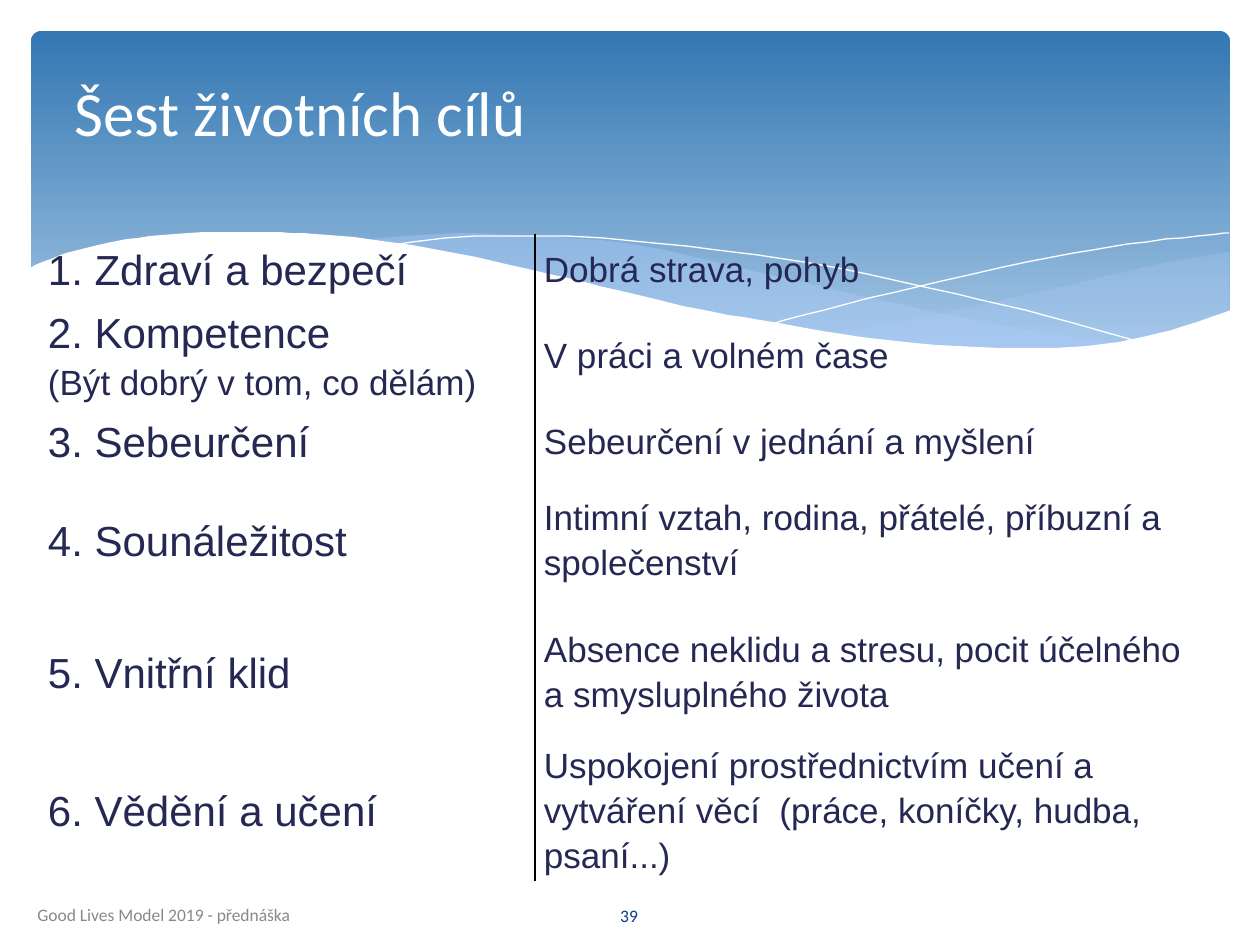
import pptx
import pptx.util
import pptx.dml.color
import pptx.enum.shapes
import pptx.enum.text
import pptx.oxml
import pptx.oxml.ns

PX = 914400 / 126
COLORS = {"banner_top": "3477B2", "banner_bottom": "9FC3E3", "wave": "ACCBF9",
          "white": "FFFFFF", "ink": "242852", "footer": "898989",
          "number": "073E87", "divider": "000000"}

# Content: text, box (left, top, width, height), size, colour, alignment
LABELS = [
    ("Good Lives Model 2019 - přednáška", (25, 890, 522, 50), 10, "footer", "LEFT"),
    ("39", (549, 891, 160, 50), 10, "number", "CENTER"),
    ("Šest životních cílů", (62, 33, 1134, 157), 36, "white", "LEFT"),
]
# Goal lines, meaning, row height
GOALS = [
    (["1. Zdraví a bezpečí"], "Dobrá strava, pohyb", 66),
    (["2. Kompetence", "(Být dobrý v tom, co dělám)"], "V práci a volném čase", 66),
    (["3. Sebeurčení"], "Sebeurčení v jednání a myšlení", 66),
    (["4. Sounáležitost"], "Intimní vztah, rodina, přátelé, příbuzní a společenství", 132),
    (["5. Vnitřní klid"],
     "Absence neklidu a stresu, pocit účelného a smysluplného života", 132),
    (["6. Vědění a učení"],
     "Uspokojení prostřednictvím učení a vytváření věcí  (práce, koníčky, hudba, psaní...)",
     132),
]
TABLE_LEFT, TABLE_TOP = 39, 234
COLUMNS = (496, 684)

# Wave edges: knots of smooth curves, joined end to end
RIGHT_WAVE = [
    [(1229, 252), (1159, 264), (1085, 281), (982, 305), (890, 324), (833, 334)],
    [(833, 334), (888, 342), (938, 347), (998, 350), (1051, 349), (1101, 345),
     (1150, 338), (1196, 324), (1229, 311)],
]
MIDDLE_WAVE = [
    [(1125, 344), (1055, 334), (976, 320), (890, 302), (793, 280), (717, 262),
     (648, 247), (586, 239), (529, 236), (455, 233), (394, 237), (360, 241)],
    [(360, 241), (431, 251), (509, 266), (566, 280), (668, 302), (757, 321),
     (838, 335), (911, 345), (974, 349), (1044, 350), (1104, 347), (1125, 344)],
]
FALLING_LINE = [[(389, 246), (445, 238), (505, 236), (567, 236), (643, 242),
                 (733, 252), (838, 268), (957, 294), (1047, 316), (1143, 343)]]
RISING_LINE = [[(772, 324), (847, 304), (942, 281), (1053, 257), (1128, 244),
                (1198, 236), (1229, 233)]]
WHITE_WAVE = [
    [(1231, 310), (1184, 326), (1133, 339), (1071, 347), (999, 348), (915, 343),
     (842, 334), (760, 320), (699, 309), (634, 294), (563, 277), (493, 261),
     (428, 248), (368, 239), (315, 234), (266, 232), (203, 232), (150, 236),
     (107, 243), (74, 251), (45, 261), (29, 268)],
    [(29, 415)], [(1231, 415)],
]
# Edges, fill, opacity in percent, line
WAVES = [
    (RIGHT_WAVE, "wave", 29, None),
    (MIDDLE_WAVE, "wave", 40, None),
    (FALLING_LINE, None, None, "white"),
    (RISING_LINE, None, None, "white"),
    (WHITE_WAVE, "white", None, None),
]


def px(length):
    return pptx.util.Emu(round(length * PX))


def rgb(name):
    return pptx.dml.color.RGBColor.from_string(COLORS[name])


def smooth(knots, steps=4):
    """Points of a Catmull-Rom curve through the knots."""
    padded = [knots[0], *knots, knots[-1]]
    points = [knots[0]]
    for a, b, c, d in zip(padded, padded[1:], padded[2:], padded[3:]):
        for step in range(1, steps + 1):
            t = step / steps
            points.append(tuple(
                (2 * q + (r - p) * t + (2 * p - 5 * q + 4 * r - s) * t ** 2
                 + (3 * q - p - 3 * r + s) * t ** 3) / 2
                for p, q, r, s in zip(a, b, c, d)))
    return points


def add_wave(slide, edges, fill, opacity, line):
    points = [point for edge in edges for point in smooth(edge)]
    builder = slide.shapes.build_freeform(*points[0], scale=PX)
    builder.add_line_segments(points[1:], close=fill is not None)
    wave = builder.convert_to_shape()
    wave.shadow.inherit = False
    if fill:
        wave.fill.solid()
        wave.fill.fore_color.rgb = rgb(fill)
    else:
        wave.fill.background()
    if opacity:
        color = wave.fill._xPr.find(".//" + pptx.oxml.ns.qn("a:srgbClr"))
        color.append(pptx.oxml.parse_xml(
            f'<a:alpha {pptx.oxml.ns.nsdecls("a")} val="{opacity * 1000}"/>'))
    if line:
        wave.line.color.rgb = rgb(line)
        wave.line.width = pptx.util.Pt(0.75)
    else:
        wave.line.fill.background()


def style(paragraph, size, color, font):
    paragraph.font.size = pptx.util.Pt(size)
    paragraph.font.name = font
    paragraph.font.color.rgb = rgb(color)


def fill_cell(cell, lines, sizes, border):
    cell.margin_left = cell.margin_right = px(9)
    cell.margin_top = cell.margin_bottom = 0
    cell.vertical_anchor = pptx.enum.text.MSO_ANCHOR.MIDDLE
    cell.fill.background()
    cell._tc.get_or_add_tcPr().insert(0, pptx.oxml.parse_xml(
        f'<a:{border} {pptx.oxml.ns.nsdecls("a")} w="12700"><a:solidFill>'
        f'<a:srgbClr val="{COLORS["divider"]}"/></a:solidFill></a:{border}>'))
    cell.text = "\n".join(lines)
    for paragraph, size in zip(cell.text_frame.paragraphs, sizes):
        paragraph.line_spacing = 1.15
        style(paragraph, size, "ink", "Arial")


def main():
    deck = pptx.Presentation()
    deck.slide_width, deck.slide_height = px(1260), px(945)
    slide = deck.slides.add_slide(deck.slide_layouts[6])

    # Banner and waves
    banner = slide.shapes.add_shape(
        pptx.enum.shapes.MSO_SHAPE.ROUNDED_RECTANGLE, px(31), px(31), px(1199), px(340))
    banner.adjustments[0] = 0.03
    banner.shadow.inherit = False
    banner.line.fill.background()
    banner.fill.gradient()
    banner.fill.gradient_angle = 270
    stops = zip(banner.fill.gradient_stops, (0, 0.9), ("banner_top", "banner_bottom"))
    for stop, position, color in stops:
        stop.position = position
        stop.color.rgb = rgb(color)
    for wave in WAVES:
        add_wave(slide, *wave)

    # Footer, slide number and title
    for text, box, size, color, align in LABELS:
        frame = slide.shapes.add_textbox(*map(px, box)).text_frame
        frame.word_wrap = True
        frame.vertical_anchor = pptx.enum.text.MSO_ANCHOR.MIDDLE
        label = frame.paragraphs[0]
        label.text = text
        label.alignment = pptx.enum.text.PP_ALIGN[align]
        style(label, size, color, "Calibri")

    # Goals table, without style or grid
    table = slide.shapes.add_table(
        len(GOALS), len(COLUMNS), px(TABLE_LEFT), px(TABLE_TOP), px(sum(COLUMNS)),
        px(sum(height for *_, height in GOALS))).table
    table.first_row = table.horz_banding = False
    style_id = table._tbl.tblPr.find(pptx.oxml.ns.qn("a:tableStyleId"))
    style_id.text = "{2D5ABB26-0587-4C30-8999-92F81FD0307C}"
    for column, width in zip(table.columns, COLUMNS):
        column.width = px(width)
    for row, (goal, meaning, height) in zip(table.rows, GOALS):
        row.height = px(height)
        fill_cell(row.cells[0], goal, (24, 20), "lnR")
        fill_cell(row.cells[1], [meaning], (20,), "lnL")

    deck.save("out.pptx")


if __name__ == "__main__":
    main()
